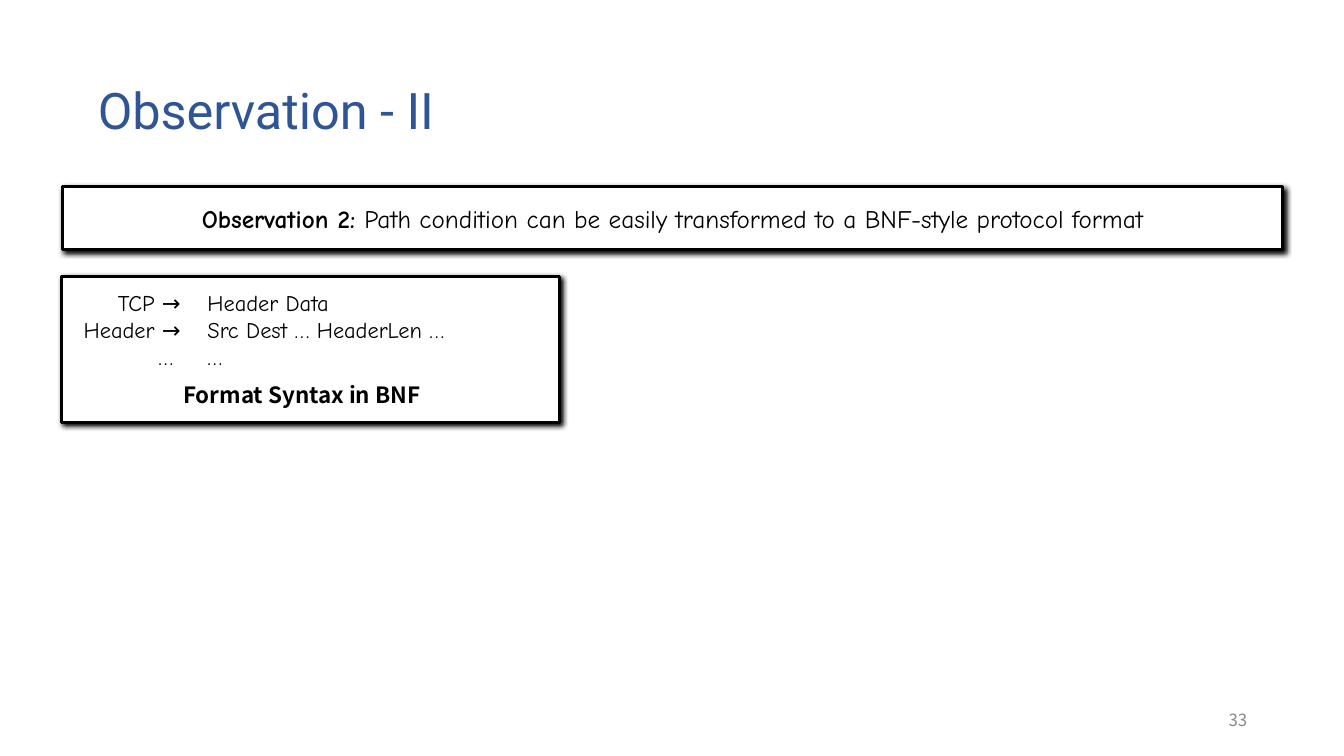
from lxml.etree import SubElement
from pptx import Presentation
from pptx.dml.color import RGBColor
from pptx.enum.shapes import MSO_SHAPE
from pptx.enum.text import MSO_ANCHOR, MSO_AUTO_SIZE, PP_ALIGN
from pptx.oxml.ns import qn
from pptx.util import Inches, Pt

HAND = "Comic Neue"
SANS = "Noto Sans CJK SC"


def color(code):
    return RGBColor.from_string(code)


def style(run, font, size, code="000000", bold=False):
    run.font.name = font
    run.font.size = Pt(size)
    run.font.bold = bold
    run.font.color.rgb = color(code)


def add_shadow(shape):
    shape.shadow.inherit = False
    effects = shape._element.spPr.find(qn("a:effectLst"))
    outer = SubElement(effects, qn("a:outerShdw"), blurRad=str(Pt(4)),
                       dist=str(Pt(2)), dir=str(45 * 60000), algn="tl",
                       rotWithShape="0")
    SubElement(outer, qn("a:srgbClr"), val="000000")


def add_card(slide, left, top, width, height):
    card = slide.shapes.add_shape(MSO_SHAPE.RECTANGLE, Inches(left), Inches(top),
                                  Inches(width), Inches(height))
    card.fill.solid()
    card.fill.fore_color.rgb = color("FFFFFF")
    card.line.color.rgb = color("000000")
    card.line.width = Pt(2)
    add_shadow(card)
    return card


def add_label(slide, box, lines, font, size, code="000000", bold=False,
              align=PP_ALIGN.LEFT, inset=0.1, anchor=MSO_ANCHOR.TOP, wrap=False):
    label = slide.shapes.add_textbox(*map(Inches, box))
    frame = label.text_frame
    frame.text = "\n".join(lines)
    frame.word_wrap = wrap
    frame.auto_size = MSO_AUTO_SIZE.NONE if wrap else MSO_AUTO_SIZE.SHAPE_TO_FIT_TEXT
    frame.vertical_anchor = anchor
    frame.margin_left = frame.margin_right = Inches(inset)
    for para in frame.paragraphs:
        para.alignment = align
        for run in para.runs:
            style(run, font, size, code, bold)
    return label


def add_claim(slide, head, body):
    frame = add_card(slide, 0.62, 1.85, 12.1, 0.63).text_frame
    frame.word_wrap = True
    frame.vertical_anchor = MSO_ANCHOR.MIDDLE
    para = frame.paragraphs[0]
    para.alignment = PP_ALIGN.CENTER
    for text, bold in ((head, True), (body, False)):
        run = para.add_run()
        run.text = text
        style(run, HAND, 18, bold=bold)


def add_syntax(slide):
    add_card(slide, 0.61, 2.74, 4.94, 1.45)
    add_label(slide, (0.67, 2.82, 1.22, 0.91), ["TCP →", "Header →", "… "],
              HAND, 16, align=PP_ALIGN.RIGHT)
    add_label(slide, (1.96, 2.82, 2.74, 0.91),
              ["Header Data", "Src Dest … HeaderLen …", "…"], HAND, 16)
    add_label(slide, (1.72, 3.73, 2.66, 0.37), ["Format Syntax in BNF"],
              SANS, 16, bold=True)


def main():
    deck = Presentation()
    deck.slide_width = Inches(13.33)
    deck.slide_height = Inches(7.5)
    slide = deck.slides.add_slide(deck.slide_layouts[6])
    add_syntax(slide)
    title = add_label(slide, (0.92, 0.4, 11.5, 1.45), ["Observation - II"],
                      "Roboto", 36, "2F5597", inset=0.05,
                      anchor=MSO_ANCHOR.MIDDLE, wrap=True)
    title.text_frame.paragraphs[0].line_spacing = 0.9
    add_label(slide, (12.12, 7, 0.3, 0.29), ["33"], SANS, 12, "888888",
              align=PP_ALIGN.RIGHT, inset=0.05, anchor=MSO_ANCHOR.MIDDLE)
    add_claim(slide, "Observation 2: ",
              "Path condition can be easily transformed to a BNF-style protocol format")
    deck.save("out.pptx")


if __name__ == "__main__":
    main()
